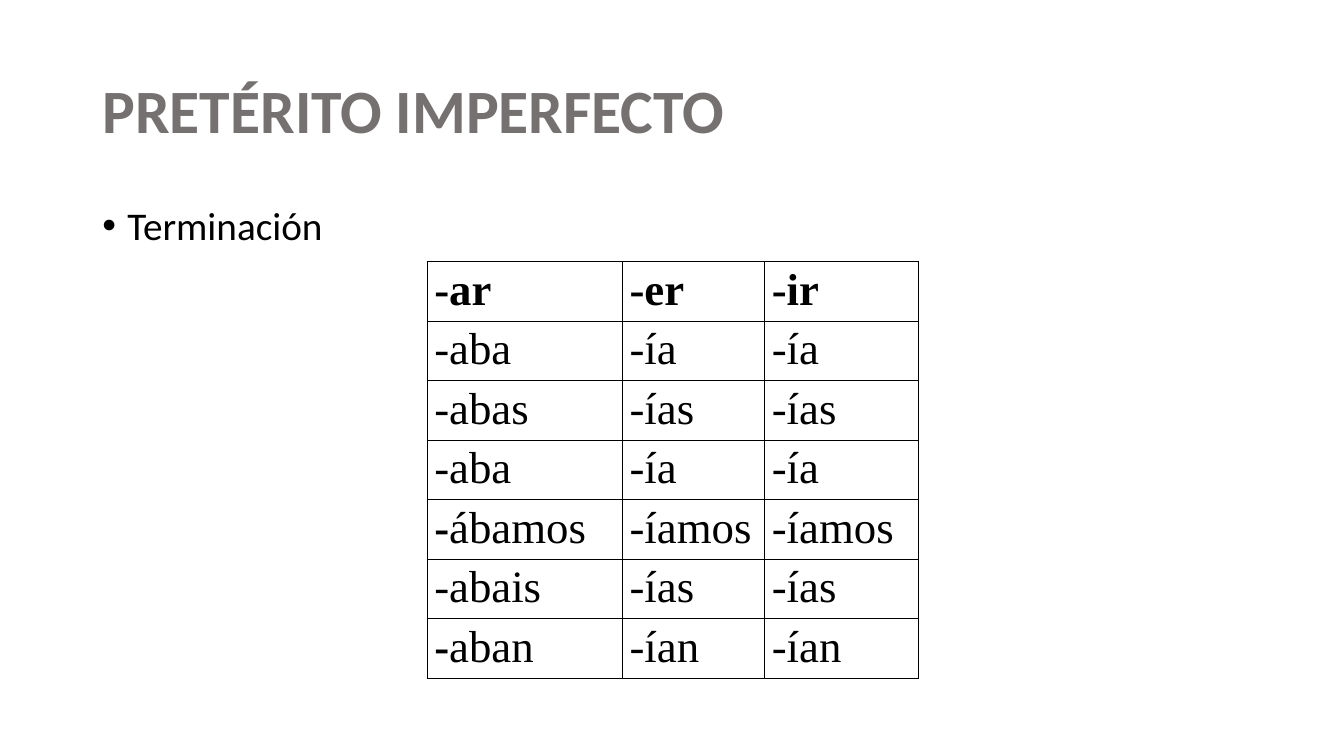
from lxml import etree
from pptx import Presentation
from pptx.dml.color import RGBColor
from pptx.enum.text import MSO_ANCHOR, PP_ALIGN
from pptx.oxml.ns import qn
from pptx.util import Pt

LEFT, MIDDLE, TOP = PP_ALIGN.LEFT, MSO_ANCHOR.MIDDLE, MSO_ANCHOR.TOP
BLACK = RGBColor(0x00, 0x00, 0x00)
GRAY = RGBColor(0x76, 0x71, 0x71)

TITLE = "PRETÉRITO IMPERFECTO"
POINT = "Terminación"
ENDINGS = [
    ("-ar", "-er", "-ir"),
    ("-aba", "-ía", "-ía"),
    ("-abas", "-ías", "-ías"),
    ("-aba", "-ía", "-ía"),
    ("-ábamos", "-íamos", "-íamos"),
    ("-abais", "-ías", "-ías"),
    ("-aban", "-ían", "-ían"),
]
BOLD_DASH = {"-ábamos", "-aban"}

TITLE_BOX = (66, 28.8, 828, 104.4)
BODY_BOX = (66, 144, 828, 342.7)
GRID_LEFT, GRID_TOP = 305.2, 187
COLS = (139.5, 101.6, 110)
ROW = 42.5

TITLE_FONT = {"name": "Calibri", "size": Pt(44), "bold": True}
BODY_FONT = {"name": "Calibri", "size": Pt(28)}
CELL_FONT = {"name": "Times New Roman", "size": Pt(32)}
TITLE_PARA = {"alignment": LEFT, "line_spacing": 0.9}
BODY_PARA = {"line_spacing": 0.9, "space_before": Pt(10)}
CELL_PARA = {"line_spacing": 1.07, "space_after": Pt(8)}
CELL_FORM = {"margin_left": Pt(5), "margin_right": Pt(5), "margin_top": 0,
             "margin_bottom": 0, "vertical_anchor": TOP}


def apply(item, form):
    for key, value in form.items():
        setattr(item, key, value)


def write(para, text, font, color, form):
    apply(para, form)
    run = para.add_run()
    run.text = text
    apply(run.font, font)
    run.font.color.rgb = color


def add_bullet(para):
    props = para._p.get_or_add_pPr()
    props.set("marL", str(Pt(18)))
    props.set("indent", str(-Pt(18)))
    etree.SubElement(props, qn("a:buFont")).set("typeface", "Arial")
    etree.SubElement(props, qn("a:buChar")).set("char", "•")


def add_borders(cell):
    props = cell._tc.get_or_add_tcPr()
    for side in ("lnL", "lnR", "lnT", "lnB"):
        line = etree.SubElement(props, qn("a:" + side), w=str(Pt(1)))
        fill = etree.SubElement(line, qn("a:solidFill"))
        etree.SubElement(fill, qn("a:srgbClr")).set("val", str(BLACK))


def fill_cell(cell, text, head):
    apply(cell, CELL_FORM)
    add_borders(cell)
    cell.fill.background()
    parts = [(text, head)]
    if text in BOLD_DASH:
        parts = [(text[0], True), (text[1:], False)]
    for part, bold in parts:
        font = {**CELL_FONT, "bold": bold}
        write(cell.text_frame.paragraphs[0], part, font, BLACK, CELL_PARA)


def add_grid(slide):
    frame = slide.shapes.add_table(
        len(ENDINGS), len(COLS), Pt(GRID_LEFT), Pt(GRID_TOP),
        Pt(sum(COLS)), Pt(ROW * len(ENDINGS)))
    table = frame.table
    apply(table, {"first_row": False, "horz_banding": False})
    for col, width in zip(table.columns, COLS):
        col.width = Pt(width)
    for r, row in enumerate(ENDINGS):
        table.rows[r].height = Pt(ROW)
        for c, text in enumerate(row):
            fill_cell(table.cell(r, c), text, r == 0)


def main():
    deck = Presentation()
    deck.slide_width, deck.slide_height = Pt(960), Pt(540)
    slide = deck.slides.add_slide(deck.slide_layouts[5])

    title = slide.shapes.title
    places = zip(("left", "top", "width", "height"), map(Pt, TITLE_BOX))
    apply(title, dict(places))
    title.text_frame.vertical_anchor = MIDDLE
    write(title.text_frame.paragraphs[0], TITLE, TITLE_FONT, GRAY, TITLE_PARA)

    body = slide.shapes.add_textbox(*map(Pt, BODY_BOX)).text_frame
    body.word_wrap = True
    para = body.paragraphs[0]
    write(para, POINT, BODY_FONT, BLACK, BODY_PARA)
    add_bullet(para)

    add_grid(slide)
    deck.save("out.pptx")


if __name__ == "__main__":
    main()
